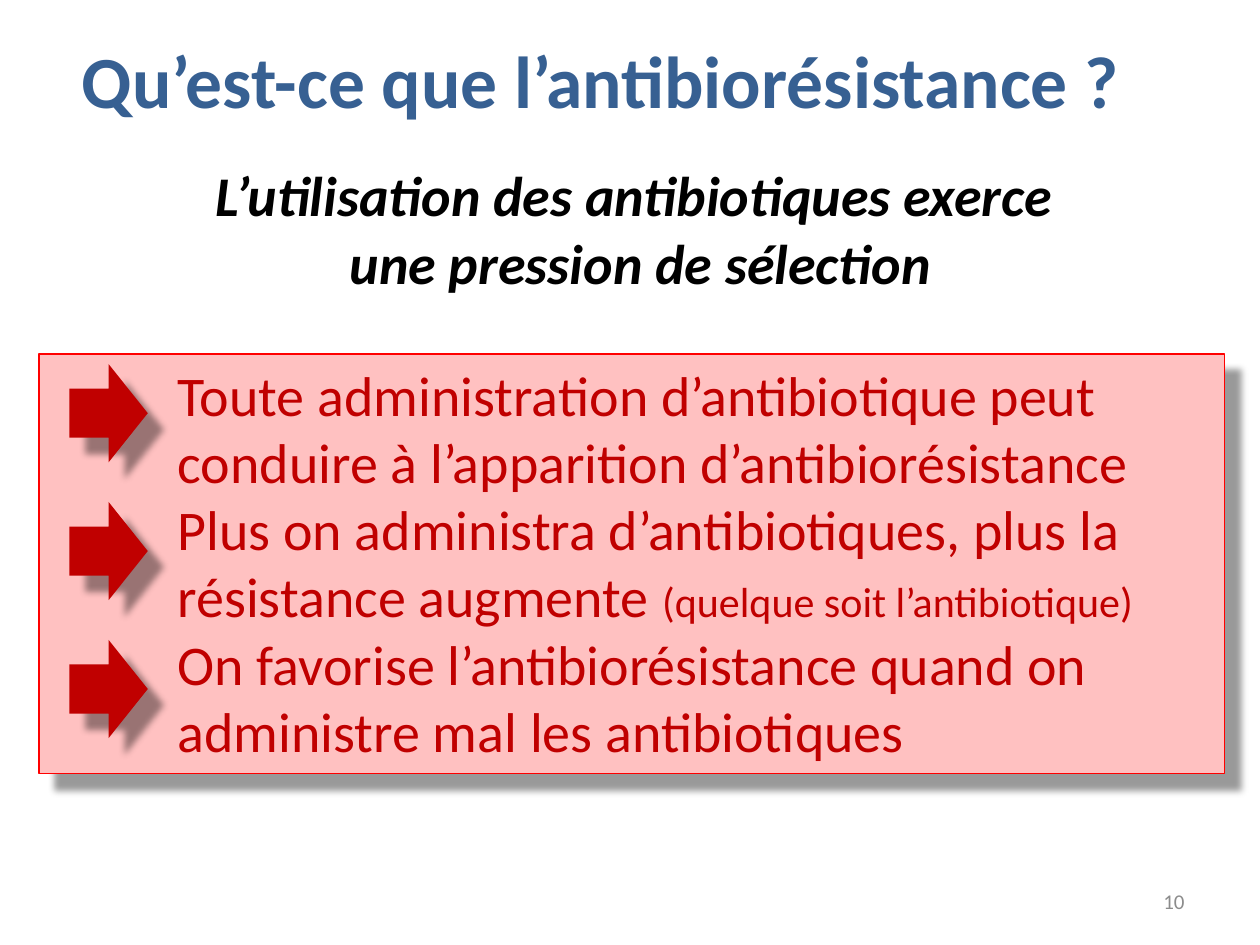
from lxml import etree
from pptx import Presentation
from pptx.dml.color import RGBColor
from pptx.enum.shapes import MSO_SHAPE
from pptx.enum.text import MSO_ANCHOR, PP_ALIGN
from pptx.oxml import parse_xml
from pptx.oxml.ns import nsdecls
from pptx.util import Cm, Pt

RECTANGLE = MSO_SHAPE.RECTANGLE
RIGHT_ARROW = MSO_SHAPE.RIGHT_ARROW
TOP, MIDDLE = MSO_ANCHOR.TOP, MSO_ANCHOR.MIDDLE
LEFT, CENTER, RIGHT = PP_ALIGN.LEFT, PP_ALIGN.CENTER, PP_ALIGN.RIGHT

BLACK = RGBColor(0x00, 0x00, 0x00)
BLUE = RGBColor(0x37, 0x60, 0x92)
DARK_RED = RGBColor(0xC0, 0x00, 0x00)
RED = RGBColor(0xFF, 0x00, 0x00)
PINK = RGBColor(0xFF, 0xC1, 0xC1)
GREY = RGBColor(0x8C, 0x8C, 0x8C)

FONT = "Calibri"
MESSAGES = [
    ["Toute administration d’antibiotique peut conduire à l’apparition d’antibiorésistance"],
    ["Plus on administra d’antibiotiques, plus la résistance augmente ",
     "(quelque soit l’antibiotique)"],
    ["On favorise l’antibiorésistance quand on administre mal les antibiotiques"],
]


def format_span(span, size, color, bold=False, italic=False):
    font = span.font
    font.name, font.size = FONT, Pt(size)
    font.color.rgb = color
    font.bold, font.italic = bold, italic


def add_text(page, place, lines, size, color, align=LEFT, anchor=TOP, bold=False, italic=False):
    frame = page.shapes.add_textbox(*map(Cm, place)).text_frame
    frame.word_wrap = True
    frame.vertical_anchor = anchor
    frame.text = "\n".join(lines)
    for para in frame.paragraphs:
        para.alignment = align
        for span in para.runs:
            format_span(span, size, color, bold, italic)


def add_shadow(shape):
    shape.shadow.inherit = False
    effects = shape.element.spPr.find("{*}effectLst")
    shadow = parse_xml(
        f'<a:outerShdw {nsdecls("a")} blurRad="{Pt(4)}" dist="{Pt(13)}" dir="2700000" '
        'algn="tl" rotWithShape="0"/>')
    color = etree.SubElement(shadow, shadow.tag.replace("outerShdw", "srgbClr"), val=str(BLACK))
    etree.SubElement(color, shadow.tag.replace("outerShdw", "alpha"), val="40000")
    effects.append(shadow)


def add_shadowed_shape(page, kind, place, fill, line=None):
    shape = page.shapes.add_shape(kind, *map(Cm, place))
    shape.fill.solid()
    shape.fill.fore_color.rgb = fill
    if line is None:
        shape.line.fill.background()
    else:
        shape.line.color.rgb = line
        shape.line.width = Pt(0.75)
    add_shadow(shape)
    return shape


def add_message_panel(page):
    panel = add_shadowed_shape(page, RECTANGLE, (0.79, 7.14, 23.9, 8.46), PINK, RED)
    frame = panel.text_frame
    frame.word_wrap = True
    frame.vertical_anchor = TOP
    for index, parts in enumerate(MESSAGES):
        para = frame.add_paragraph() if index else frame.paragraphs[0]
        para.alignment = LEFT
        para.level = 2
        properties = para._p.get_or_add_pPr()
        properties.set("marL", str(Cm(2.54)))
        properties.set("indent", "0")
        for part, size in zip(parts, (32, 24)):
            span = para.add_run()
            span.text = part
            format_span(span, size, DARK_RED)


def main():
    deck = Presentation()
    deck.slide_width, deck.slide_height = Cm(25.4), Cm(19.05)
    page = deck.slides.add_slide(deck.slide_layouts[6])

    add_message_panel(page)
    add_text(page, (1.4, 0.58, 22.68, 2.06), ["Qu’est-ce que l’antibiorésistance ?"],
             42, BLUE, bold=True)
    add_text(page, (2.69, 3.12, 20.45, 3),
             ["L’utilisation des antibiotiques exerce ", "une pression de sélection"],
             32, BLACK, CENTER, bold=True, italic=True)
    for index in range(len(MESSAGES)):
        add_shadowed_shape(page, RIGHT_ARROW, (1.4, 7.34 + 2.78 * index, 1.58, 1.98), DARK_RED)
    add_text(page, (18.21, 17.65, 5.92, 1.02), ["10"], 12, GREY, RIGHT, MIDDLE)

    deck.save("out.pptx")


if __name__ == "__main__":
    main()
